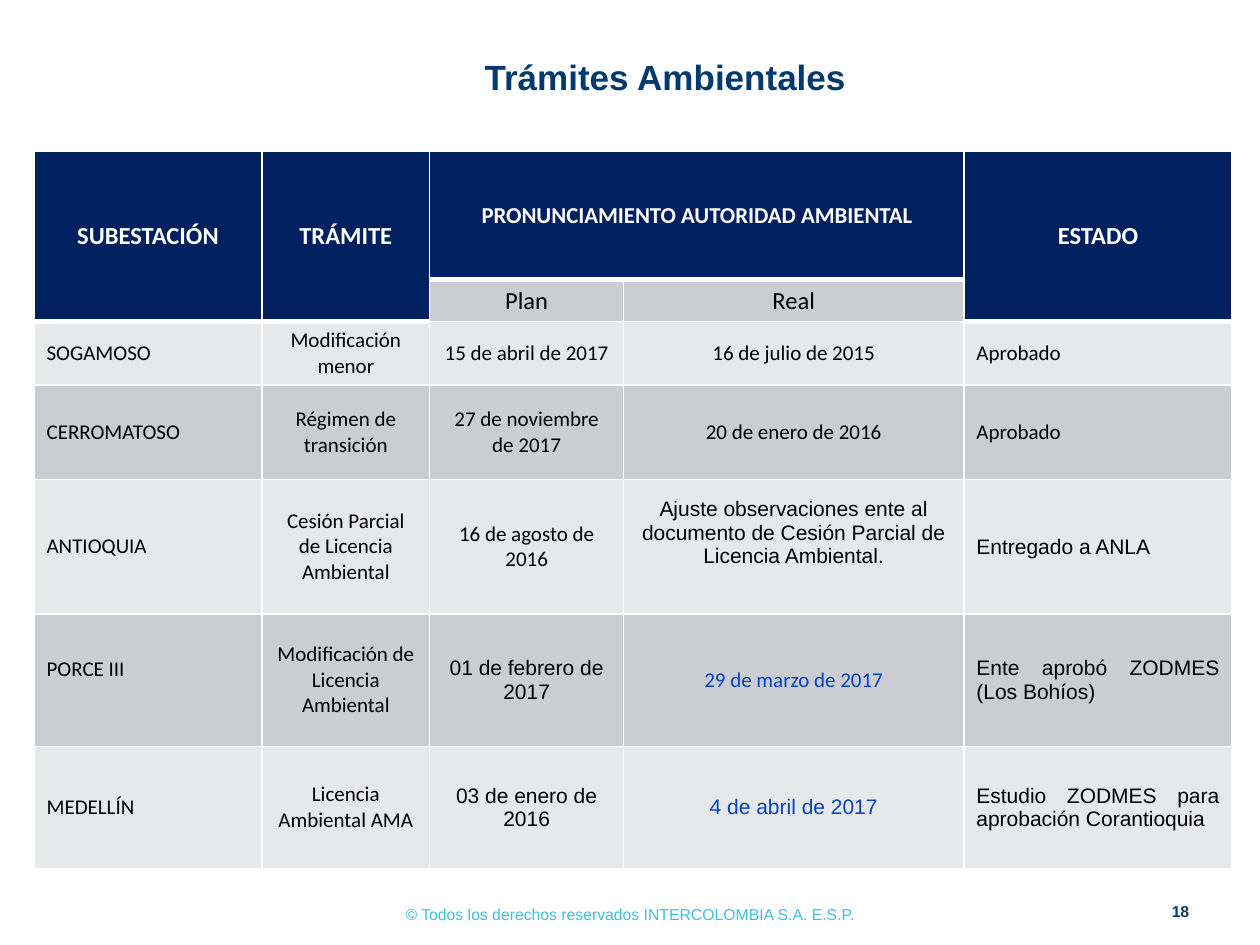
from lxml.etree import SubElement
from pptx import Presentation
from pptx.dml.color import RGBColor
from pptx.enum.text import MSO_ANCHOR as Anchor, PP_ALIGN as Align
from pptx.oxml.ns import qn
from pptx.util import Inches, Pt

COLORS = {
    "navy": "002060", "title": "003A6F", "footer": "40BDE8", "link": "0042C8",
    "dark band": "CCCDD2", "light band": "E7E8EA", "white": "FFFFFF", "black": "000000",
}


def write(frame, text, size, color, font="Arial", bold=False, align=Align.CENTER):
    frame.word_wrap = True
    para = frame.paragraphs[0]
    para.text = text
    para.alignment = align
    para.font.size = Pt(size)
    para.font.name = font
    para.font.bold = bold
    para.font.color.rgb = RGBColor.from_string(COLORS[color])


def set_borders(cell, widths):
    """Draw white cell borders; widths maps an edge tag to points."""
    props = cell._tc.get_or_add_tcPr()
    for index, (edge, width) in enumerate(widths.items()):
        line = props.makeelement(qn(f"a:{edge}"), {"w": str(Pt(width))})
        fill = SubElement(line, qn("a:solidFill"))
        SubElement(fill, qn("a:srgbClr"), val=COLORS["white"])
        props.insert(index, line)


deck = Presentation()
deck.slide_width, deck.slide_height = Inches(10), Inches(7.5)
page = deck.slides.add_slide(deck.slide_layouts[6])

# Footer, title and page number
for text, place, size, color, bold, anchor in [
    ("© Todos los derechos reservados INTERCOLOMBIA S.A. E.S.P.",
     (2.72, 7.13, 4.56, 0.25), 9, "footer", False, Anchor.TOP),
    ("Trámites Ambientales", (1.73, 0.34, 7.1, 0.54), 20, "title", True, Anchor.MIDDLE),
    ("18", (9.12, 7.1, 0.4, 0.26), 9, "title", True, Anchor.BOTTOM),
]:
    box = page.shapes.add_textbox(*map(Inches, place))
    box.text_frame.vertical_anchor = anchor
    write(box.text_frame, text, size, color, bold=bold)
    if text == "18":
        box.text_frame.margin_right = 0

# Table of permits
col_widths = [1.81, 1.33, 1.54, 2.7, 2.13]
row_heights = [1.02, 0.31, 0.5, 0.75, 1.07, 1.05, 0.97]
rows = [
    ["SUBESTACIÓN", "TRÁMITE", "PRONUNCIAMIENTO AUTORIDAD AMBIENTAL", "", "ESTADO"],
    ["", "", "Plan", "Real", ""],
    ["SOGAMOSO", "Modificación menor", "15 de abril de 2017", "16 de julio de 2015", "Aprobado"],
    ["CERROMATOSO", "Régimen de transición", "27 de noviembre de 2017",
     "20 de enero de 2016", "Aprobado"],
    ["ANTIOQUIA", "Cesión Parcial de Licencia Ambiental", "16 de agosto de 2016",
     "Ajuste observaciones ente al documento de Cesión Parcial de Licencia Ambiental.",
     "Entregado a ANLA"],
    ["PORCE III", "Modificación de Licencia Ambiental", "01 de febrero de 2017",
     "29 de marzo de 2017", "Ente aprobó ZODMES (Los Bohíos)"],
    ["MEDELLÍN", "Licencia Ambiental AMA", "03 de enero de 2016",
     "4 de abril de 2017", "Estudio ZODMES para aprobación Corantioquia"],
]
split_cols = (2, 3)  # columns under the shared heading
arial_cells = {(4, 3), (4, 4), (5, 2), (5, 4), (6, 2), (6, 3), (6, 4)}
link_cells = {(5, 3), (6, 3)}
raised_cells = {(4, 3): 0.27, (5, 0): 0.23}  # bottom margins
body_aligns = [Align.LEFT, Align.CENTER, Align.CENTER, Align.CENTER, Align.JUSTIFY]

table = page.shapes.add_table(
    len(rows), len(col_widths), Inches(0.27), Inches(1.2),
    Inches(sum(col_widths)), Inches(sum(row_heights))).table
for column, width in zip(table.columns, col_widths):
    column.width = Inches(width)
for table_row, height in zip(table.rows, row_heights):
    table_row.height = Inches(height)

for r, row in enumerate(rows):
    for c, text in enumerate(row):
        cell = table.cell(r, c)
        heading = r == 0 or (r == 1 and c not in split_cols)
        below_heading = r == (1 if c in split_cols else 2)
        set_borders(cell, {"lnL": 1, "lnR": 1, "lnT": 3 if below_heading else 1,
                           "lnB": 3 if heading else 1})
        band = "navy" if heading else "dark band" if r % 2 else "light band"
        cell.fill.solid()
        cell.fill.fore_color.rgb = RGBColor.from_string(COLORS[band])
        cell.vertical_anchor = Anchor.MIDDLE
        if (r, c) in raised_cells:
            cell.margin_bottom = Inches(raised_cells[r, c])
        if text:
            size = 12 if r > 1 else 13 if (r, c) == (0, 2) else 14
            color = "white" if heading else "link" if (r, c) in link_cells else "black"
            font = "Arial" if (r, c) in arial_cells else "Calibri"
            align = body_aligns[c] if r > 1 else Align.CENTER
            write(cell.text_frame, text, size, color, font, heading, align)

table.cell(0, 2).merge(table.cell(0, 3))
for c in (0, 1, 4):
    table.cell(0, c).merge(table.cell(1, c))

deck.save("out.pptx")
